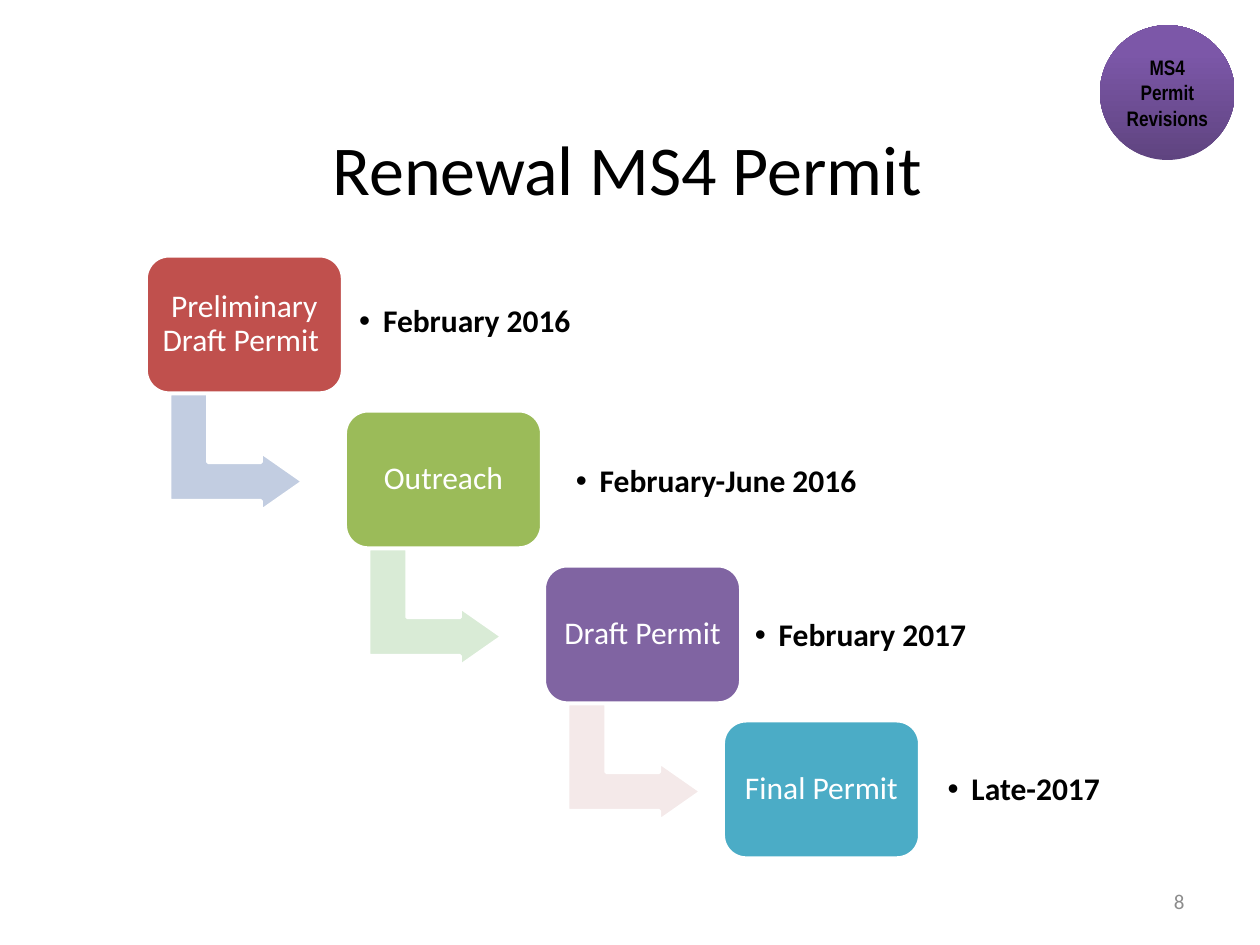
from dataclasses import dataclass

from lxml import etree
from pptx import Presentation
from pptx.dml.color import RGBColor
from pptx.enum.shapes import MSO_SHAPE
from pptx.enum.text import MSO_ANCHOR, PP_ALIGN
from pptx.oxml.ns import qn
from pptx.shapes.autoshape import Shape
from pptx.util import Inches, Pt

ROUND = MSO_SHAPE.ROUNDED_RECTANGLE
BENT = MSO_SHAPE.BENT_UP_ARROW
OVAL = MSO_SHAPE.OVAL
MIDDLE = MSO_ANCHOR.MIDDLE
LEFT, CENTER, RIGHT = PP_ALIGN.LEFT, PP_ALIGN.CENTER, PP_ALIGN.RIGHT

TOP, PITCH = 2.03, 1.23  # first step and the drop to the next
BOX_W, BOX_H = 1.56, 1.09


@dataclass
class Step:
    name: str
    date: str
    left: float
    fill: str
    date_box: tuple[float, float, float, float]
    arrow: str = ""  # fill of the arrow to the next step


STEPS = [
    Step("Preliminary Draft Permit ", "February 2016", 1.16, "C0504D",
         (2.78, 2.1, 2.32, 0.92), "C2CDE1"),
    Step("Outreach", "February-June 2016", 2.74, "9BBB59",
         (4.5, 3.39, 2.46, 0.88), "D9EBD6"),
    Step("Draft Permit", "February 2017", 4.32, "8064A2",
         (5.92, 4.61, 1.95, 0.88), "F4E9E9"),
    Step("Final Permit", "Late-2017", 5.74, "4BACC6",
         (7.45, 5.83, 1.61, 0.88)),
]


def color(value: str) -> RGBColor:
    return RGBColor.from_string(value)


def write(shape: Shape, text: str, size: float, ink: str, align: PP_ALIGN,
          font: str = "Calibri", bold: bool = False,
          inset: float | None = None, spacing: float = 1.0) -> None:
    frame = shape.text_frame
    frame.text = text
    frame.word_wrap = True
    frame.vertical_anchor = MIDDLE
    if inset is not None:
        frame.margin_left = frame.margin_right = Inches(inset)
        frame.margin_top = frame.margin_bottom = Inches(inset)
    para = frame.paragraphs[0]
    para.alignment = align
    para.line_spacing = spacing
    style = para.runs[0].font
    style.name, style.size, style.bold = font, Pt(size), bold
    style.color.rgb = color(ink)


def add_bullet(shape: Shape) -> None:
    props = shape.text_frame.paragraphs[0]._p.get_or_add_pPr()
    props.set("marL", str(Inches(0.19)))
    props.set("indent", str(Inches(-0.19)))
    etree.SubElement(props, qn("a:buFont"), typeface="Arial")
    etree.SubElement(props, qn("a:buChar"), char="•")


def add_shape(slide, kind: MSO_SHAPE, left: float, top: float,
              width: float, height: float, fill: str) -> Shape:
    shape = slide.shapes.add_shape(
        kind, Inches(left), Inches(top), Inches(width), Inches(height))
    shape.shadow.inherit = False
    shape.fill.solid()
    shape.fill.fore_color.rgb = color(fill)
    shape.line.color.rgb = color("FFFFFF")
    shape.line.width = Pt(2)
    return shape


def add_text(slide, left: float, top: float, width: float,
             height: float) -> Shape:
    return slide.shapes.add_textbox(
        Inches(left), Inches(top), Inches(width), Inches(height))


def add_step(slide, step: Step, top: float) -> None:
    # Arrow down and across to the next step
    if step.arrow:
        arrow = add_shape(slide, BENT, step.left + 0.25, top + 1.03,
                          0.93, 1.06, step.arrow)
        arrow.rotation = 90
        for i, value in enumerate((0.328, 0.25, 0.358)):
            arrow.adjustments[i] = value

    # Named box
    box = add_shape(slide, ROUND, step.left, top, BOX_W, BOX_H, step.fill)
    box.adjustments[0] = 0.167
    write(box, step.name, 18, "FFFFFF", CENTER, inset=0.07, spacing=0.9)

    # Date beside it
    date = add_text(slide, *step.date_box)
    write(date, step.date, 18, "000000", LEFT, bold=True, inset=0.07,
          spacing=0.9)
    add_bullet(date)


def add_badge(slide) -> None:
    badge = add_shape(slide, OVAL, 8.73, 0.2, 1.07, 1.07, "7C57A8")
    badge.line.fill.background()
    badge.fill.gradient()
    badge.fill.gradient_angle = 90
    stops = ((0, "5F4480"), (0.8, "7C57A8"))
    for stop, (place, tint) in zip(badge.fill.gradient_stops, stops):
        stop.position = place
        stop.color.rgb = color(tint)
    write(badge, "MS4 Permit Revisions", 12, "000000", CENTER,
          font="Arial Narrow", bold=True, inset=0.02)


def main() -> None:
    deck = Presentation()
    deck.slide_width, deck.slide_height = Inches(10), Inches(7.5)
    slide = deck.slides.add_slide(deck.slide_layouts[5])

    # Title
    title = slide.shapes.title
    title.left, title.top = Inches(1.17), Inches(0.67)
    title.width, title.height = Inches(7.62), Inches(1.32)
    write(title, "Renewal MS4 Permit", 40, "000000", CENTER)

    # Staircase of steps
    for i, step in enumerate(STEPS):
        add_step(slide, step, TOP + i * PITCH)

    # Corner badge and page number
    add_badge(slide)
    page = add_text(slide, 7.17, 6.95, 2.33, 0.4)
    write(page, "8", 12, "8C8C8C", RIGHT)

    deck.save("out.pptx")


if __name__ == "__main__":
    main()
